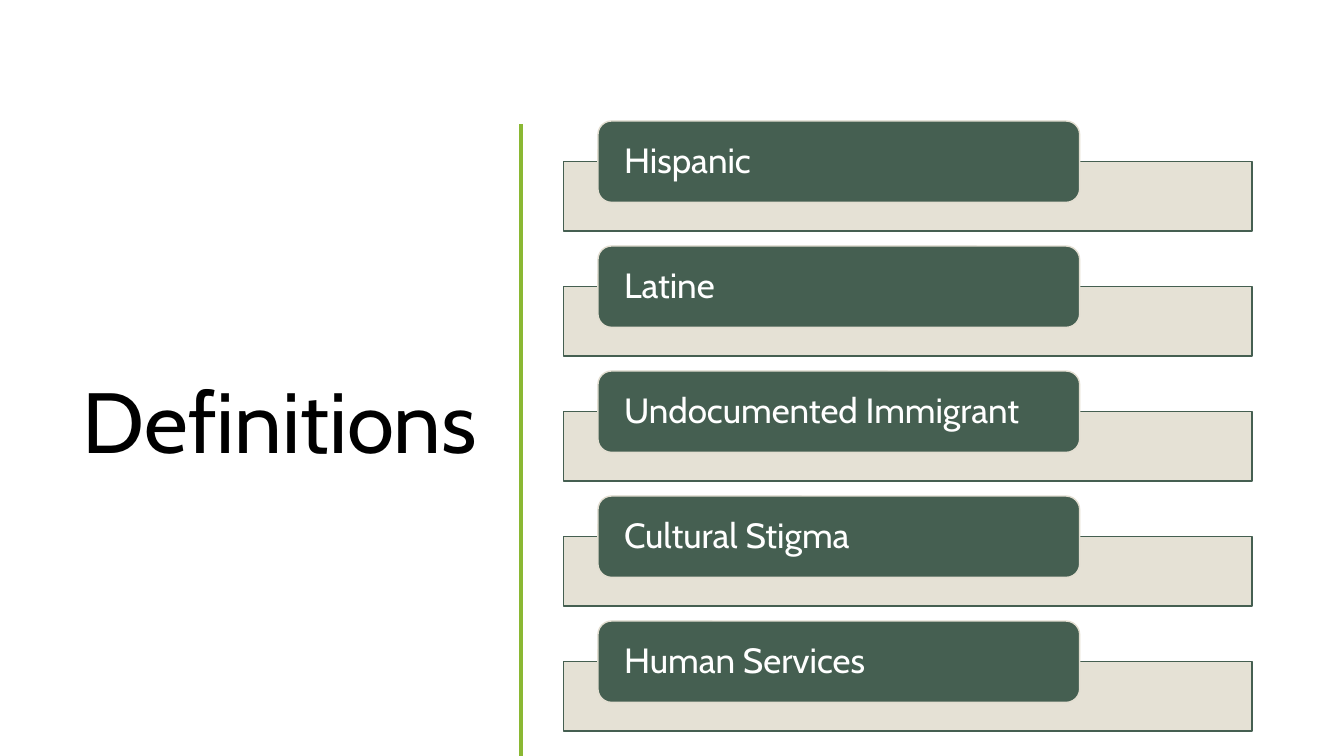
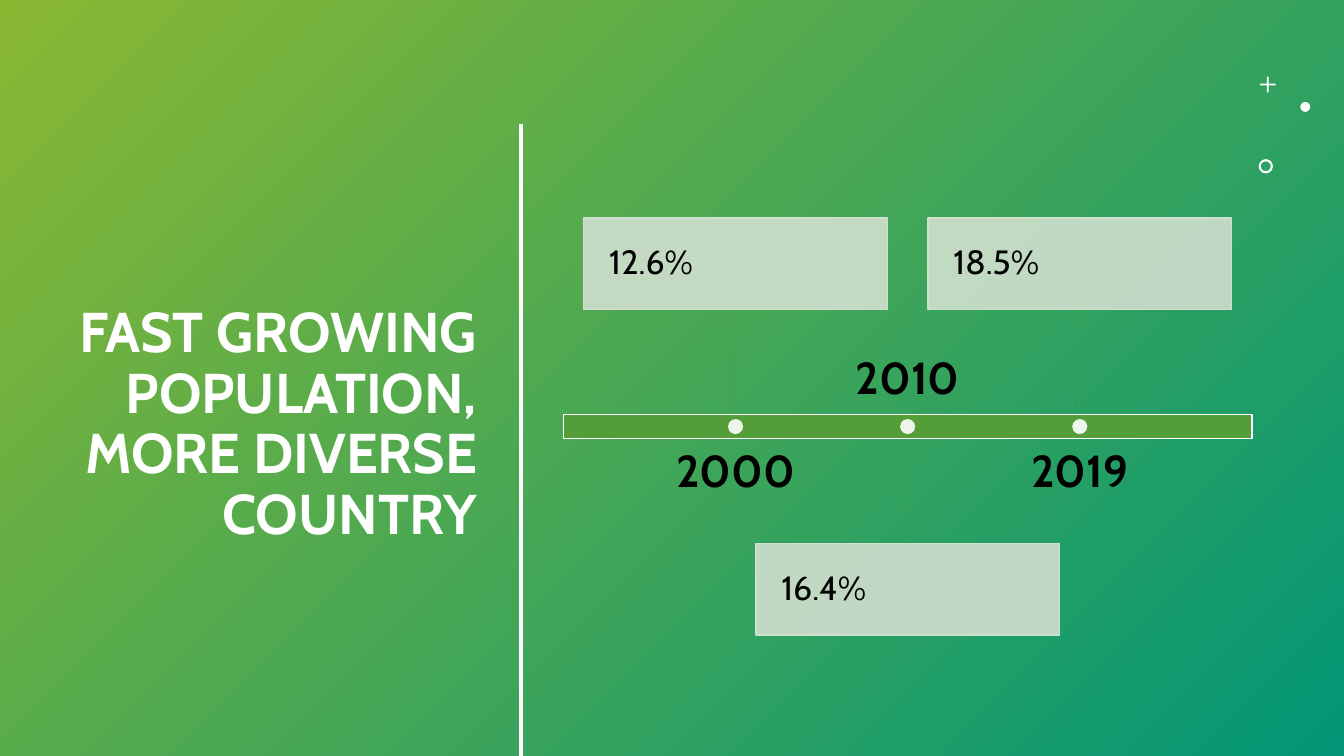
from dataclasses import dataclass

from lxml import etree
from pptx import Presentation
from pptx.dml.color import RGBColor
from pptx.enum import dml, shapes, text
from pptx.oxml import ns
from pptx.util import Cm, Pt

FONT = "Cabin"
COLORS = {
    "black": "000000",
    "white": "FFFFFF",
    "lime": "8AB833",
    "teal": "029676",
    "forest": "455F51",
    "sand": "E3DED1",
    "grass": "549E39",
    "mist": "D1DFCE",
}
SLIDE_W, SLIDE_H = 33.87, 19.05
CONTENT_LEFT, CONTENT_W = 14.2, 17.35

DEFINITIONS = ["Hispanic", "Latine", "Undocumented Immigrant", "Cultural Stigma", "Human Services"]
ROW_TOP, ROW_PITCH = 3.05, 3.15

AXIS_Y, AXIS_H = 10.75, 0.61
CARD_W, CARD_H, CARD_OFFSET = 7.65, 2.31, 4.1
YEAR_W, YEAR_H, YEAR_OFFSET = 6.93, 1.75, 1.44
DOT_SIZE = 0.38


@dataclass(frozen=True)
class Box:
    """A rectangle in centimetres."""
    left: float
    top: float
    width: float
    height: float

    def lengths(self) -> tuple:
        return Cm(self.left), Cm(self.top), Cm(self.width), Cm(self.height)


@dataclass(frozen=True)
class Milestone:
    """A year on the axis; side is -1 when its card is above, 1 when below."""
    year: str
    share: str
    side: int


@dataclass(frozen=True)
class Ornament:
    kind: shapes.MSO_SHAPE
    box: Box
    adjustment: float | None = None


MILESTONES = [
    Milestone("2000", "12.6%", -1),
    Milestone("2010", "16.4%", 1),
    Milestone("2019", "18.5%", -1),
]
ORNAMENTS = [
    Ornament(shapes.MSO_SHAPE.CROSS, Box(31.75, 1.93, 0.4, 0.4), 0.44),
    Ornament(shapes.MSO_SHAPE.OVAL, Box(32.77, 2.57, 0.25, 0.25)),
    Ornament(shapes.MSO_SHAPE.DONUT, Box(31.72, 4.01, 0.36, 0.36), 0.15),
]


def rgb(color: str) -> RGBColor:
    return RGBColor.from_string(COLORS[color])


def centred_box(x: float, y: float, width: float, height: float) -> Box:
    return Box(x - width / 2, y - height / 2, width, height)


def add_panel(slide, kind, box: Box, fill: str, line: str | None = None, opacity: int = 100):
    """Add a filled preset shape; opacity is the fill's, in percent."""
    panel = slide.shapes.add_shape(kind, *box.lengths())
    panel.shadow.inherit = False
    panel.fill.solid()
    panel.fill.fore_color.rgb = rgb(fill)
    if opacity < 100:
        color = panel._element.spPr.find(ns.qn("a:solidFill"))[0]
        etree.SubElement(color, ns.qn("a:alpha"), val=str(opacity * 1000))
    if line:
        panel.line.color.rgb = rgb(line)
        panel.line.width = Pt(1)
    else:
        panel.line.fill.background()
    return panel


def write(shape, words: str, size: int, color: str, *, bold: bool = False,
          align=text.PP_ALIGN.LEFT, anchor=text.MSO_ANCHOR.MIDDLE,
          insets: tuple[float, float] = (0, 0)) -> None:
    """Set and format a shape's text; insets are horizontal and vertical, in cm."""
    frame = shape.text_frame
    frame.text = words
    frame.word_wrap = True
    frame.auto_size = text.MSO_AUTO_SIZE.NONE
    frame.vertical_anchor = anchor
    frame.margin_left = frame.margin_right = Cm(insets[0])
    frame.margin_top = frame.margin_bottom = Cm(insets[1])
    for paragraph in frame.paragraphs:
        paragraph.alignment = align
        paragraph.line_spacing = 0.9
        for run in paragraph.runs:
            run.font.name = FONT
            run.font.size = Pt(size)
            run.font.bold = bold
            run.font.color.rgb = rgb(color)


def add_vertical_line(slide, x: float, top: float, bottom: float, color: str, width: float):
    line = slide.shapes.add_connector(
        shapes.MSO_CONNECTOR.STRAIGHT, Cm(x), Cm(top), Cm(x), Cm(bottom))
    line.line.color.rgb = rgb(color)
    line.line.width = Pt(width)
    etree.SubElement(line._element.spPr, ns.qn("a:effectLst"))
    return line


def add_titled_slide(deck, title: str, size: int, color: str, divider: str, bold: bool = False):
    """Add a slide with a right-aligned title left of a vertical divider."""
    slide = deck.slides.add_slide(deck.slide_layouts[5])
    heading = slide.shapes.title
    heading.left, heading.top, heading.width, heading.height = Box(1.32, 2.96, 10.95, 15.52).lengths()
    write(heading, title, size, color, bold=bold, align=text.PP_ALIGN.RIGHT, insets=(0.25, 0.13))
    add_vertical_line(slide, 13.13, 3.13, SLIDE_H, divider, 2.25)
    return slide


def add_gradient_backdrop(slide) -> None:
    backdrop = add_panel(slide, shapes.MSO_SHAPE.RECTANGLE, Box(0, 0, SLIDE_W, SLIDE_H), "lime")
    backdrop.fill.gradient()
    backdrop.fill.gradient_angle = 315
    for stop, (position, color) in zip(backdrop.fill.gradient_stops, [(0, "lime"), (1, "teal")]):
        stop.position = position
        stop.color.rgb = rgb(color)
    slide.shapes._spTree.insert(2, backdrop._element)


def add_definition(slide, term: str, top: float) -> None:
    add_panel(slide, shapes.MSO_SHAPE.RECTANGLE,
              Box(CONTENT_LEFT, top + 1.02, CONTENT_W, 1.75), "sand", "forest", opacity=90)
    label = add_panel(slide, shapes.MSO_SHAPE.ROUNDED_RECTANGLE,
                      Box(CONTENT_LEFT + 0.87, top, 12.14, 2.05), "forest", "sand")
    write(label, term, 25, "white", insets=(0.56, 0))


def add_milestone(slide, milestone: Milestone, x: float) -> None:
    side = milestone.side
    card_y = AXIS_Y + side * CARD_OFFSET
    card = add_panel(slide, shapes.MSO_SHAPE.RECTANGLE,
                     centred_box(x, card_y, CARD_W, CARD_H), "mist", "mist", opacity=90)
    write(card, milestone.share, 24, "black", insets=(0.64, 0.64))

    stem_ends = sorted([card_y - side * CARD_H / 2, AXIS_Y + side * AXIS_H / 2])
    stem = add_vertical_line(slide, x, *stem_ends, "grass", 0.5)
    stem.line.dash_style = dml.MSO_LINE.DASH

    year_box = centred_box(x, AXIS_Y - side * YEAR_OFFSET, YEAR_W, YEAR_H)
    year = slide.shapes.add_textbox(*year_box.lengths())
    write(year, milestone.year, 32, "black", bold=True, align=text.PP_ALIGN.CENTER,
          anchor=text.MSO_ANCHOR.BOTTOM if side > 0 else text.MSO_ANCHOR.TOP)
    add_panel(slide, shapes.MSO_SHAPE.OVAL,
              centred_box(x, AXIS_Y, DOT_SIZE, DOT_SIZE), "white", opacity=90)


def build_definitions(deck) -> None:
    slide = add_titled_slide(deck, "Definitions", 61, "black", "lime")
    for row, term in enumerate(DEFINITIONS):
        add_definition(slide, term, ROW_TOP + row * ROW_PITCH)


def build_population(deck) -> None:
    slide = add_titled_slide(deck, "FAST GROWING POPULATION, MORE DIVERSE COUNTRY",
                             40, "white", "white", bold=True)
    add_gradient_backdrop(slide)
    for ornament in ORNAMENTS:
        mark = add_panel(slide, ornament.kind, ornament.box, "white")
        if ornament.adjustment is not None:
            mark.adjustments[0] = ornament.adjustment
    add_panel(slide, shapes.MSO_SHAPE.RECTANGLE,
              Box(CONTENT_LEFT, AXIS_Y - AXIS_H / 2, CONTENT_W, AXIS_H), "grass", "white")
    spacing = CONTENT_W / (len(MILESTONES) + 1)
    for place, milestone in enumerate(MILESTONES, start=1):
        add_milestone(slide, milestone, CONTENT_LEFT + place * spacing)


def main() -> None:
    deck = Presentation()
    deck.slide_width, deck.slide_height = Cm(SLIDE_W), Cm(SLIDE_H)
    build_definitions(deck)
    build_population(deck)
    deck.save("out.pptx")


if __name__ == "__main__":
    main()
